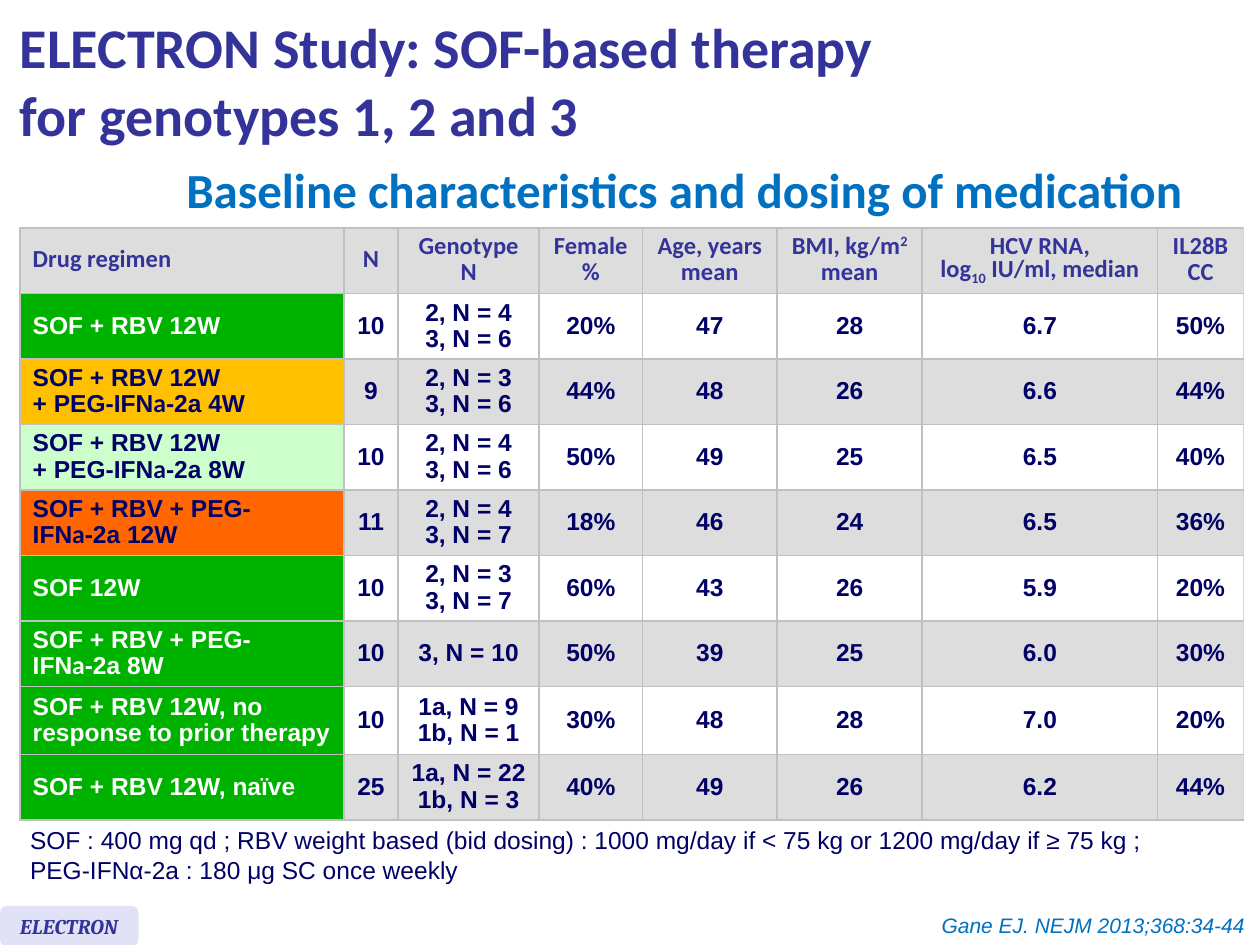
import pptx
import pptx.dml.color
import pptx.enum.shapes
import pptx.enum.text
import pptx.oxml
import pptx.util
from pptx.util import Inches

RGBColor = pptx.dml.color.RGBColor
ALIGN = pptx.enum.text.PP_ALIGN
MIDDLE = pptx.enum.text.MSO_ANCHOR.MIDDLE

INDIGO = RGBColor(0x33, 0x33, 0x99)
NAVY = RGBColor(0x00, 0x00, 0x66)
BLUE = RGBColor(0x00, 0x70, 0xC0)
WHITE = RGBColor(0xFF, 0xFF, 0xFF)
GREY = RGBColor(0xDD, 0xDD, 0xDD)
LILAC = RGBColor(0xE2, 0xE2, 0xF6)
GREEN = RGBColor(0x00, 0xB2, 0x00)
AMBER = RGBColor(0xFF, 0xC0, 0x00)
MINT = RGBColor(0xCC, 0xFF, 0xCC)
ORANGE = RGBColor(0xFF, 0x66, 0x00)
RULE = RGBColor(0xC0, 0xC0, 0xC0)
EDGE = RGBColor(0xD0, 0xD0, 0xF0)

COLS = [2.57, 0.43, 1.12, 0.82, 1.07, 1.15, 1.87, 0.68]
ROW, TALL = 0.52, 0.54
TALL_ROW = 7

# Marks: \n new paragraph, \v line break, | splits runs,
# ^ superscript, _ subscript, ~ Lato.
HEAD = ["Drug regimen", "N", "Genotype\nN", "Female\n%", "Age, years\nmean",
        "BMI, kg/m|^2\nmean", "HCV RNA,\vlog|_10| IU/ml, median", "IL28B\vCC"]
ARMS = [
    (GREEN, "SOF + RBV 12W", "10", "2, N = 4\n3, N = 6",
     "20%", "47", "28", "6.7", "50%"),
    (AMBER, "SOF + RBV 12W\n+ PEG-IFN|~a|-2a 4W", "9", "2, N = 3\n3, N = 6",
     "44%", "48", "26", "6.6", "44%"),
    (MINT, "SOF + RBV 12W\n+ PEG-IFN|~a|-2a 8W", "10", "2, N = 4\n3, N = 6",
     "50%", "49", "25", "6.5", "40%"),
    (ORANGE, "SOF + RBV + PEG-IFN|~a|-2a 12W", "11", "2, N = 4\n3, N = 7",
     "18%", "46", "24", "6.5", "36%"),
    (GREEN, "SOF 12W", "10", "2, N = 3\n3, N = 7",
     "60%", "43", "26", "5.9", "20%"),
    (GREEN, "SOF + RBV + PEG-IFN|~a|-2a 8W", "10", "3, N = 10",
     "50%", "39", "25", "6.0", "30%"),
    (GREEN, "SOF + RBV 12W, no response to prior therapy", "10",
     "1a, N = 9\n1b, N = 1", "30%", "48", "28", "7.0", "20%"),
    (GREEN, "SOF + RBV 12W, naïve", "25", "1a, N = 22\n1b, N = 3",
     "40%", "49", "26", "6.2", "44%"),
]


def write(frame, text, size=14, face="Arial", color=NAVY, bold=False,
          slant=False, align=ALIGN.LEFT, pitch=None):
    """Fill a text frame, reading the run marks listed above."""
    for i, line in enumerate(text.split("\n")):
        para = frame.paragraphs[0] if i == 0 else frame.add_paragraph()
        para.alignment = align
        if pitch:
            para.line_spacing = pptx.util.Pt(pitch)
        for j, part in enumerate(line.split("\v")):
            if j:
                para.add_line_break()
            for piece in part.split("|"):
                mark = piece[0] if piece[0] in "^_~" else ""
                run = para.add_run()
                run.text = piece[len(mark):]
                font = run.font
                font.size = pptx.util.Pt(size)
                font.name = "Lato" if mark == "~" else face
                font.color.rgb = color
                font.bold, font.italic = bold, slant
                if mark in ("^", "_"):
                    shift = "30000" if mark == "^" else "-25000"
                    run.font._element.set("baseline", shift)


def add_text(shapes, box, text, anchor=None, **style):
    frame = shapes.add_textbox(*map(Inches, box)).text_frame
    frame.word_wrap = True
    if anchor is None:
        frame.auto_size = pptx.enum.text.MSO_AUTO_SIZE.SHAPE_TO_FIT_TEXT
    else:
        frame.vertical_anchor = anchor
    write(frame, text, **style)


def add_rules(cell, right):
    props = cell._tc.get_or_add_tcPr()
    for side in "LRTB":
        color = right if side == "R" else RULE
        props.append(pptx.oxml.parse_xml(
            f'<a:ln{side} xmlns:a="http://schemas.openxmlformats.org/'
            'drawingml/2006/main" w="12700"><a:solidFill>'
            f'<a:srgbClr val="{color}"/></a:solidFill></a:ln{side}>'))


def fill_cell(cell, text, fill, right, **style):
    add_rules(cell, right)
    cell.fill.solid()
    cell.fill.fore_color.rgb = fill
    cell.vertical_anchor = MIDDLE
    write(cell.text_frame, text, bold=True, pitch=15, **style)


def add_grid(shapes):
    count = len(ARMS) + 1
    high = ROW * (count - 1) + TALL
    table = shapes.add_table(count, len(COLS), Inches(0.16), Inches(1.81),
                             Inches(sum(COLS)), Inches(high)).table
    for col, width in zip(table.columns, COLS):
        col.width = Inches(width)
    for r, row in enumerate(table.rows):
        row.height = Inches(TALL if r == TALL_ROW else ROW)
        tint, *texts = ARMS[r - 1] if r else (GREY, *HEAD)
        band = WHITE if r % 2 else GREY
        for c, text in enumerate(texts):
            if r == 0:
                face, color = "Calibri", INDIGO
            else:
                face = "Arial"
                color = WHITE if c == 0 and tint == GREEN else NAVY
            fill_cell(table.cell(r, c), text, band if c else tint,
                      EDGE if c == len(COLS) - 1 else RULE,
                      face=face, color=color,
                      align=ALIGN.CENTER if c else ALIGN.LEFT)


def add_badge(shapes):
    group = shapes.add_group_shape().shapes
    kind = pptx.enum.shapes.MSO_SHAPE.ROUNDED_RECTANGLE
    tab = group.add_shape(kind, *map(Inches, (0, 7.19, 1.1, 0.32)))
    tab.shadow.inherit = False
    tab.fill.solid()
    tab.fill.fore_color.rgb = LILAC
    tab.line.fill.background()
    add_text(group, (0.06, 7.2, 1.35, 0.3), "ELECTRON", size=12,
             face="Cambria", color=INDIGO, bold=True, slant=True)


def main():
    deck = pptx.Presentation()
    deck.slide_width, deck.slide_height = Inches(10), Inches(7.5)
    shapes = deck.slides.add_slide(deck.slide_layouts[6]).shapes
    add_grid(shapes)
    add_text(shapes, (1.06, 1.22, 8.74, 0.57),
             "Baseline characteristics and dosing of medication", size=28,
             face="Calibri", color=BLUE, bold=True, align=ALIGN.CENTER)
    add_text(shapes, (0.14, 6.5, 9.8, 0.57),
             "SOF : 400 mg qd ; RBV weight based (bid dosing) : 1000 mg/day "
             "if < 75 kg or 1200 mg/day if ≥ 75 kg ;\v"
             "PEG-IFNα-2a : 180 μg SC once weekly")
    add_badge(shapes)
    add_text(shapes, (0.06, 0.03, 9.83, 1.21),
             "ELECTRON Study: SOF-based therapy\vfor genotypes 1, 2 and 3",
             anchor=MIDDLE, size=32, face="Calibri", color=INDIGO, bold=True)
    add_text(shapes, (6.17, 7.19, 3.81, 0.3), "Gane EJ. NEJM 2013;368:34-44",
             size=12, color=BLUE, slant=True, align=ALIGN.RIGHT)
    deck.save("out.pptx")


if __name__ == "__main__":
    main()
